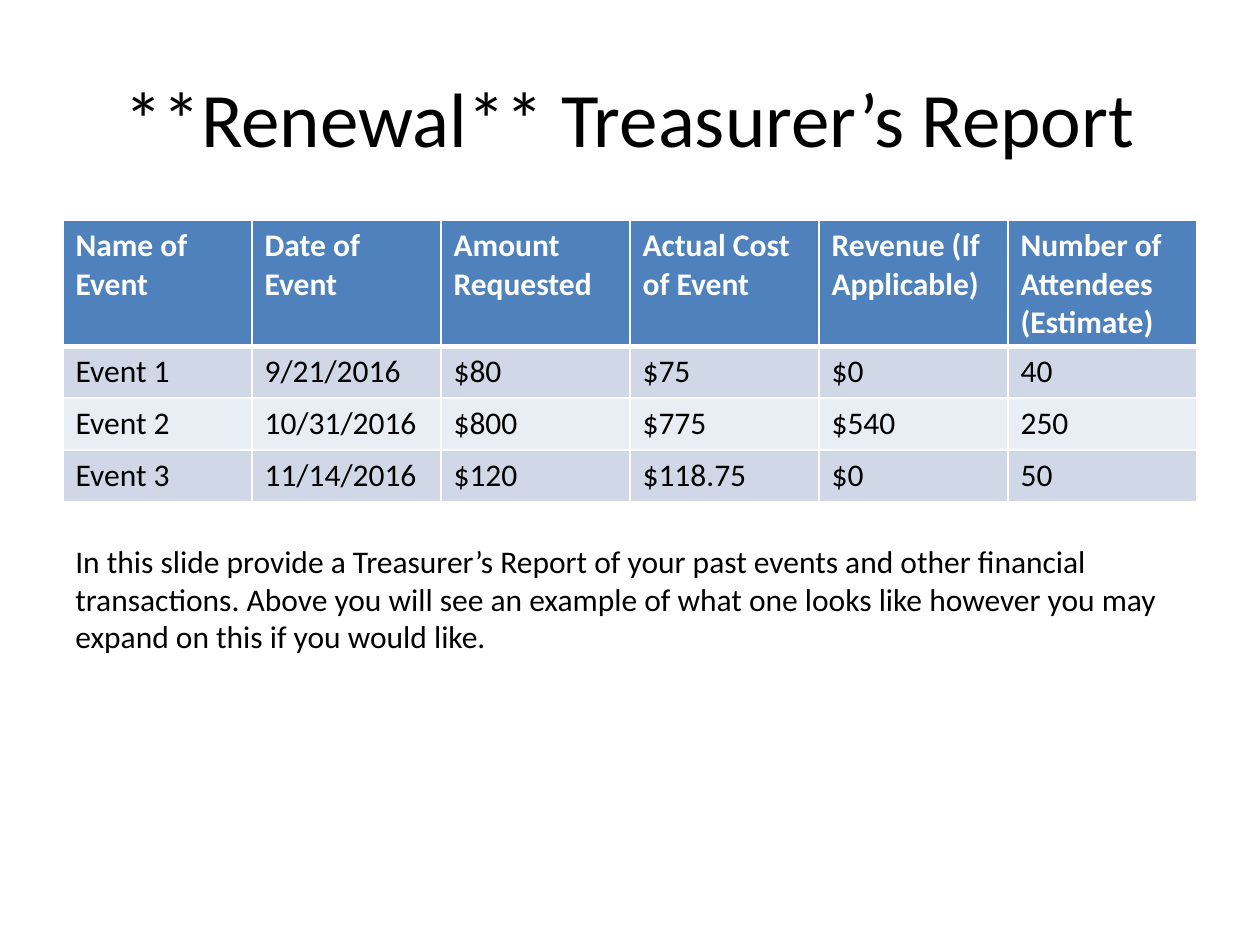
import pptx
import pptx.dml.color
import pptx.enum.text
import pptx.oxml
import pptx.oxml.ns
import pptx.util

ANCHOR = pptx.enum.text.MSO_ANCHOR
ALIGN = pptx.enum.text.PP_ALIGN


def color(hex_string):
    return pptx.dml.color.RGBColor.from_string(hex_string)


def write(frame, text, size=18, fill="000000", bold=False,
          align=ALIGN.LEFT, anchor=ANCHOR.TOP):
    frame.word_wrap = True
    frame.vertical_anchor = anchor
    paragraph = frame.paragraphs[0]
    paragraph.alignment = align
    run = paragraph.add_run()
    run.text = text
    run.font.name = "Calibri"
    run.font.size = pptx.util.Pt(size)
    run.font.bold = bold
    run.font.color.rgb = color(fill)


presentation = pptx.Presentation()
presentation.slide_width = pptx.util.Inches(10)
presentation.slide_height = pptx.util.Inches(7.5)
slide = presentation.slides.add_slide(presentation.slide_layouts[6])

# Layout: one content column with a margin of a twentieth of the slide
left = int(presentation.slide_width * 0.05)
width = int(presentation.slide_width * 0.9)
inches = pptx.util.Inches

# Title
title = slide.shapes.add_textbox(left, inches(0.3), width, inches(1.25))
write(title.text_frame, "**Renewal** Treasurer’s Report", size=44,
      align=ALIGN.CENTER, anchor=ANCHOR.MIDDLE)

# Table of events
rows = [
    ["Name of Event", "Date of Event", "Amount Requested",
     "Actual Cost of Event", "Revenue (If Applicable)",
     "Number of Attendees (Estimate)"],
    ["Event 1", "9/21/2016", "$80", "$75", "$0", "40"],
    ["Event 2", "10/31/2016", "$800", "$775", "$540", "250"],
    ["Event 3", "11/14/2016", "$120", "$118.75", "$0", "50"],
]
header_height, row_height = inches(1), inches(0.41)
table = slide.shapes.add_table(
    len(rows), len(rows[0]), left, inches(1.75), width,
    header_height + row_height * (len(rows) - 1)).table

for row_index, values in enumerate(rows):
    header = row_index == 0
    table.rows[row_index].height = header_height if header else row_height
    band = "4F81BD" if header else ("E9EDF4", "D0D8E8")[row_index % 2]
    for column_index, value in enumerate(values):
        cell = table.cell(row_index, column_index)
        write(cell.text_frame, value, bold=header,
              fill="FFFFFF" if header else "000000")
        cell.fill.solid()
        cell.fill.fore_color.rgb = color(band)
        # White borders, thicker between the header and the body
        thick_side = {0: "lnB", 1: "lnT"}.get(row_index)
        properties = cell._tc.get_or_add_tcPr()
        for position, side in enumerate(("lnL", "lnR", "lnT", "lnB")):
            line_width = pptx.util.Pt(3 if side == thick_side else 1)
            properties.insert(position, pptx.oxml.parse_xml(
                f'<a:{side} {pptx.oxml.ns.nsdecls("a")} w="{int(line_width)}">'
                '<a:solidFill><a:srgbClr val="FFFFFF"/></a:solidFill>'
                f'</a:{side}>'))

# Instructions below the table
note = slide.shapes.add_textbox(left, inches(4.25), width, inches(1.01))
write(note.text_frame,
      "In this slide provide a Treasurer’s Report of your past events and "
      "other financial transactions. Above you will see an example of what "
      "one looks like however you may expand on this if you would like.")
note.text_frame.auto_size = pptx.enum.text.MSO_AUTO_SIZE.SHAPE_TO_FIT_TEXT

presentation.save("out.pptx")
